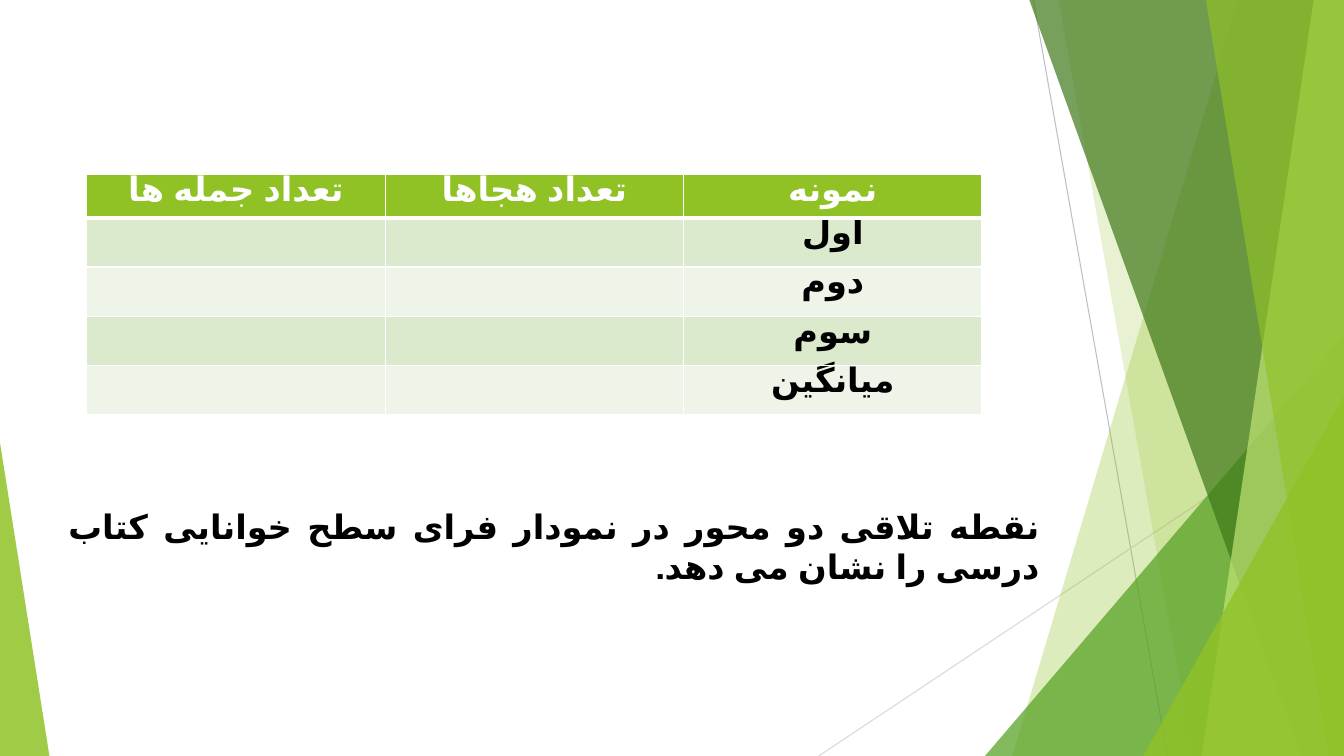
import pptx
import pptx.util
import pptx.dml.color
import pptx.enum.lang
import pptx.enum.shapes
import pptx.enum.text
import pptx.oxml
import pptx.oxml.ns

FONT, SIZE = "Karla", 24
C = {"green": "90C226", "leaf": "54A021", "forest": "3F7819", "lime": "C0E474",
     "band": "DBE9CD", "pale": "EEF4E8", "white": "FFFFFF", "black": "000000",
     "gray": "BFBFBF", "silver": "D9D9D9"}

# All places are percentages of the slide's width and height.
LINES = [((76.89, 0), (86.87, 100), "gray"), ((100, 53.73), (60.92, 100), "silver")]
FACETS = [
    ("panel", 92.12, 75.32, "green", 30),
    ("panel", 78.77, 88.75, "green", 20),
    ("triangle", (73.29, 44.4, 26.71, 55.6), 1, "leaf", 72),
    ("panel", 76.59, 96.85, "forest", 70),
    ("panel", 97.75, 89.42, "lime", 70),
    ("panel", 89.72, 98.87, "green", 65),
    ("triangle", (85.07, 52.4, 14.93, 47.6), 1, "green", 80),
    ("triangle", (0, 58.53, 3.68, 41.47), 0, "green", 85),
]
HEADER = ["تعداد جمله ها", "تعداد هجاها", "نمونه"]
SAMPLES = ["اول", "دوم", "سوم", "میانگین"]
ROWS = [HEADER] + [["", "", name] for name in SAMPLES]
TABLE_LEFT, TABLE_TOP, TABLE_WIDTH = 6.45, 23.07, 66.62
HEADER_HEIGHT, ROW_HEIGHT = 5.73, 6.53
NOTE = "نقطه تلاقی دو محور در نمودار فرای سطح خوانایی کتاب درسی را نشان می دهد."
NOTE_BOX = (4.35, 66.27, 73.74, 6.67)

prs = pptx.Presentation()
prs.slide_width = pptx.util.Inches(13.33)
prs.slide_height = pptx.util.Inches(7.5)
s = prs.slides.add_slide(prs.slide_layouts[6])


def x(share):
    return round(prs.slide_width * share / 100)


def y(share):
    return round(prs.slide_height * share / 100)


def box(left, top, width, height):
    return x(left), y(top), x(width), y(height)


def rgb(name):
    return pptx.dml.color.RGBColor.from_string(C[name])


def child(parent, tag, **attrs):
    el = parent.makeelement(pptx.oxml.ns.qn(tag), attrs)
    parent.append(el)
    return el


def paint(sp, color, opacity):
    sp.shadow.inherit = False
    sp.line.fill.background()
    sp.fill.solid()
    sp.fill.fore_color.rgb = rgb(color)
    srgb = sp._element.spPr.find(".//" + pptx.oxml.ns.qn("a:srgbClr"))
    child(srgb, "a:alpha", val=str(opacity * 1000))


def write(p, text, color, align):
    p.alignment = align
    p._p.get_or_add_pPr().set("rtl", "1")
    r = p.add_run()
    r.text = text
    r.font.name, r.font.size, r.font.bold = FONT, pptx.util.Pt(SIZE), True
    r.font.language_id = pptx.enum.lang.MSO_LANGUAGE_ID.FARSI
    r.font.color.rgb = rgb(color)


def border(cell, bottom):
    tcPr = cell._tc.get_or_add_tcPr()
    for i, (side, width) in enumerate((("L", 1), ("R", 1), ("T", 1), ("B", bottom))):
        ln = child(tcPr, "a:ln" + side, w=str(pptx.util.Pt(width)))
        child(child(ln, "a:solidFill"), "a:srgbClr", val=C["white"])
        tcPr.remove(ln)
        tcPr.insert(i, ln)


for start, end, color in LINES:
    cx = s.shapes.add_connector(pptx.enum.shapes.MSO_CONNECTOR.STRAIGHT,
                                x(start[0]), y(start[1]), x(end[0]), y(end[1]))
    cx.line.color.rgb = rgb(color)
    cx.line.width = pptx.util.Pt(0.75)
    child(cx._element.spPr, "a:effectLst")

for kind, place, foot, color, opacity in FACETS:
    if kind == "panel":
        fb = s.shapes.build_freeform(x(place), 0)
        fb.add_line_segments([(x(100), 0), (x(100), y(100)), (x(foot), y(100))], close=True)
        sp = fb.convert_to_shape()
    else:
        sp = s.shapes.add_shape(pptx.enum.shapes.MSO_SHAPE.ISOSCELES_TRIANGLE, *box(*place))
        sp.adjustments[0] = foot
    paint(sp, color, opacity)

heights = [HEADER_HEIGHT] + [ROW_HEIGHT] * len(SAMPLES)
table = s.shapes.add_table(len(ROWS), len(HEADER), *box(
    TABLE_LEFT, TABLE_TOP, TABLE_WIDTH, sum(heights))).table
for col in table.columns:
    col.width = x(TABLE_WIDTH / len(HEADER))
for i, (texts, height) in enumerate(zip(ROWS, heights)):
    table.rows[i].height = y(height)
    for j, text in enumerate(texts):
        cell = table.cell(i, j)
        cell.margin_top = cell.margin_bottom = 0
        cell.fill.solid()
        cell.fill.fore_color.rgb = rgb("green" if i == 0 else "band" if i % 2 else "pale")
        border(cell, 3 if i == 0 else 1)
        if text:
            write(cell.text_frame.paragraphs[0], text, "black" if i else "white",
                  pptx.enum.text.PP_ALIGN.CENTER)

tf = s.shapes.add_textbox(*box(*NOTE_BOX)).text_frame
tf.word_wrap = True
write(tf.paragraphs[0], NOTE, "black", pptx.enum.text.PP_ALIGN.JUSTIFY)

prs.save("out.pptx")
